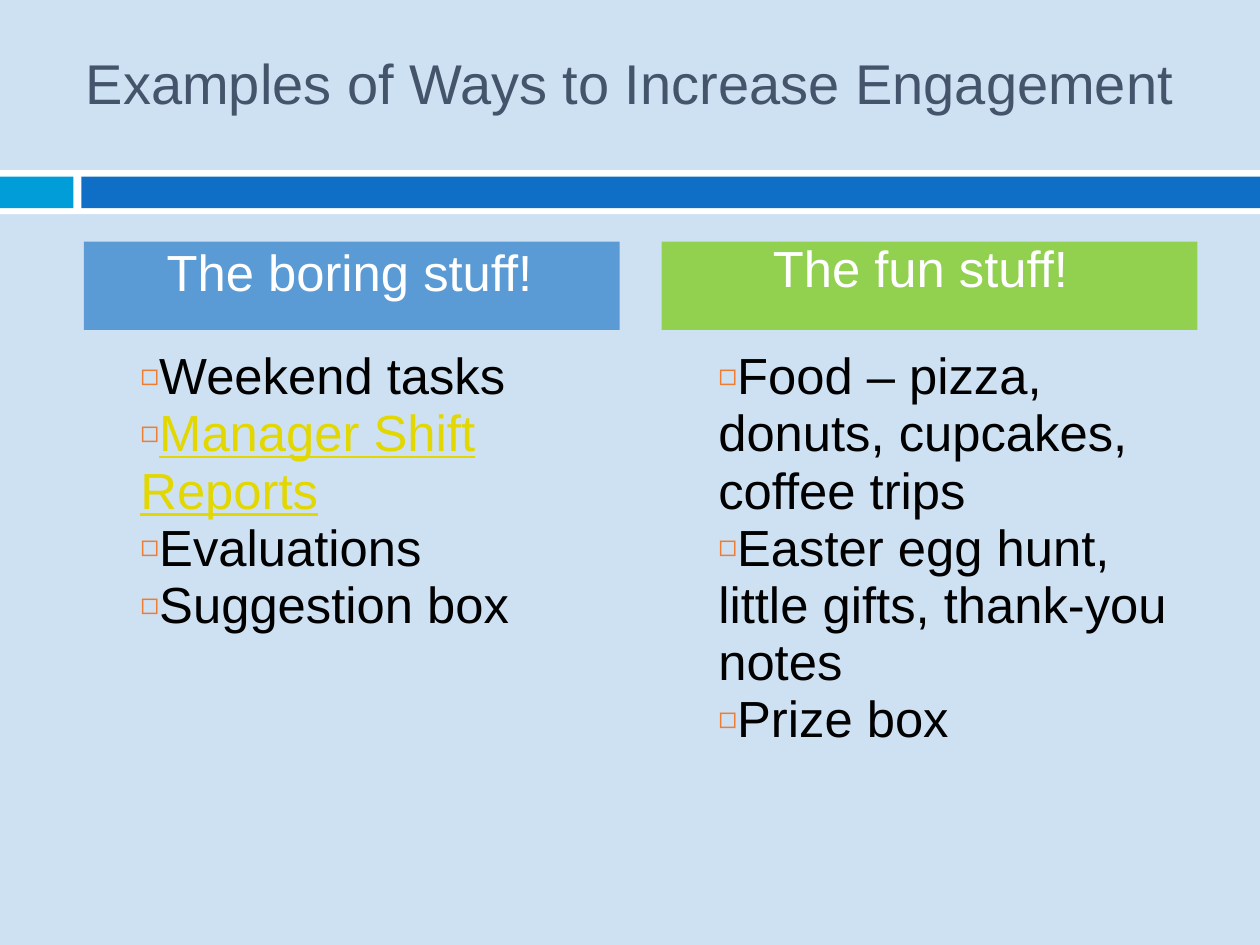
from pptx import Presentation
from pptx.dml.color import RGBColor
from pptx.enum.shapes import MSO_SHAPE
from pptx.enum.text import MSO_ANCHOR, MSO_AUTO_SIZE, PP_ALIGN
from pptx.oxml.xmlchemy import OxmlElement
from pptx.util import Cm, Pt

COLORS = {
    "background": "CEE1F3", "white": "FFFFFF", "cyan": "009DD9", "blue": "0F6FC6",
    "title": "44546A", "text": "000000", "link": "E2D700", "bullet": "ED7D31",
    "boring": "5B9BD5", "fun": "92D050",
}
COLUMN_WIDTH = 10.8


class Deck:
    font = "Arial"
    inset = 0.25

    def __init__(self):
        self.presentation = Presentation()
        self.presentation.slide_width = Cm(25.4)
        self.presentation.slide_height = Cm(19.05)
        self.slide = self.presentation.slides.add_slide(self.presentation.slide_layouts[4])
        self.paint(self.slide.background.fill, "background")

    def paint(self, fill, color):
        fill.solid()
        fill.fore_color.rgb = RGBColor.from_string(COLORS[color])

    def bar(self, left, top, width, height, color):
        band = self.slide.shapes.add_shape(
            MSO_SHAPE.RECTANGLE, Cm(left), Cm(top), Cm(width), Cm(height))
        band.shadow.inherit = False
        band.line.fill.background()
        self.paint(band.fill, color)

    def frame(self, index, box, top_inset, bottom_inset):
        holder = self.slide.placeholders[index]
        for side, value in zip(("left", "top", "width", "height"), box):
            setattr(holder, side, Cm(value))
        layout = {
            "word_wrap": True, "auto_size": MSO_AUTO_SIZE.NONE,
            "vertical_anchor": MSO_ANCHOR.TOP,
            "margin_left": Cm(self.inset), "margin_right": Cm(self.inset),
            "margin_top": Cm(top_inset), "margin_bottom": Cm(bottom_inset),
        }
        for key, value in layout.items():
            setattr(holder.text_frame, key, value)
        return holder

    def wording(self, paragraph, words, size, color, spacing=0.9, underline=False):
        run = paragraph.add_run()
        run.text = words
        for key, value in {"name": self.font, "size": Pt(size), "bold": False,
                           "underline": underline}.items():
            setattr(run.font, key, value)
        run.font.color.rgb = RGBColor.from_string(COLORS[color])
        for key, value in {"alignment": PP_ALIGN.LEFT, "line_spacing": spacing,
                           "space_before": Pt(0), "space_after": Pt(0)}.items():
            setattr(paragraph, key, value)

    def indent(self, paragraph, distance):
        properties = paragraph._p.get_or_add_pPr()
        properties.set("marL", str(Cm(distance)))
        properties.set("indent", "0")
        return properties

    def title(self, words, box):
        holder = self.frame(0, box, 0.38, 0)
        self.wording(holder.text_frame.paragraphs[0], words, 32, "title")

    def heading(self, index, words, left, color, top_inset, distance):
        holder = self.frame(index, (left, 4.87, COLUMN_WIDTH, 1.78), top_inset, 0)
        self.paint(holder.fill, color)
        paragraph = holder.text_frame.paragraphs[0]
        self.wording(paragraph, words, 29, "white")
        self.indent(paragraph, distance)

    def bullets(self, index, items, left):
        text = self.frame(index, (left, 6.78, COLUMN_WIDTH, 9.96),
                          self.inset, self.inset).text_frame
        for number, (words, linked) in enumerate(items):
            paragraph = text.add_paragraph() if number else text.paragraphs[0]
            self.wording(paragraph, words, 29, "link" if linked else "text", 0.94, linked)
            properties = self.indent(paragraph, 0.89)
            for tag, key, value in (("buClr", None, None), ("buSzPct", "val", "60000"),
                                    ("buFont", "typeface", self.font), ("buChar", "char", "◻")):
                mark = OxmlElement(f"a:{tag}")
                if key:
                    mark.set(key, value)
                else:
                    tint = OxmlElement("a:srgbClr")
                    tint.set("val", COLORS["bullet"])
                    mark.append(tint)
                properties.append(mark)


def main():
    deck = Deck()
    deck.bar(0, 3.43, 25.4, 0.89, "white")
    deck.bar(0, 3.56, 1.48, 0.64, "cyan")
    deck.bar(1.64, 3.56, 23.76, 0.64, "blue")
    deck.title("Examples of Ways to Increase Engagement", (1.48, 0.76, 22.65, 2.41))

    columns = (
        ("The boring stuff!", "boring", 1.69, 0.12, 1.42,
         (("Weekend tasks", False), ("Manager Shift Reports", True),
          ("Evaluations", False), ("Suggestion box", False))),
        ("The fun stuff!", "fun", 13.34, 0.04, 1.99,
         (("Food – pizza, donuts, cupcakes, coffee trips", False),
          ("Easter egg hunt, little gifts, thank-you notes", False),
          ("Prize box", False))),
    )
    for number, (heading, color, left, top_inset, distance, items) in enumerate(columns):
        deck.heading(1 + 2 * number, heading, left, color, top_inset, distance)
        deck.bullets(2 + 2 * number, items, left)
    deck.presentation.save("out.pptx")


if __name__ == "__main__":
    main()
